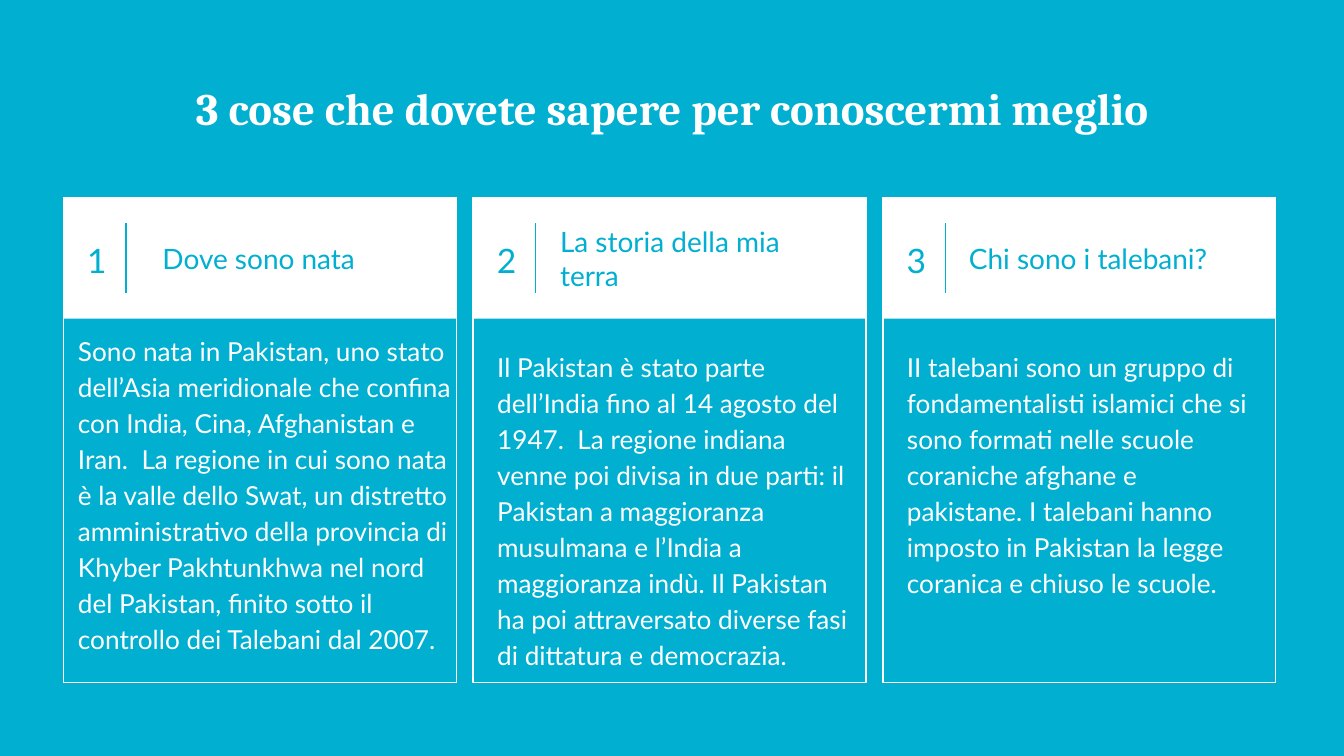
import pptx
import pptx.dml.color
import pptx.enum.shapes
import pptx.enum.text
import pptx.oxml.ns
import pptx.util
from lxml import etree

Pt = pptx.util.Pt
ALIGN = pptx.enum.text.PP_ALIGN
ANCHOR = pptx.enum.text.MSO_ANCHOR
TEAL = pptx.dml.color.RGBColor(0x01, 0xAF, 0xD1)
WHITE = pptx.dml.color.RGBColor(0xFF, 0xFF, 0xFF)

TITLE = "3 cose che dovete sapere per conoscermi meglio"
CARDS = [
    {
        "heading": "Dove sono nata",
        "heading_offset": 46,
        "body": "Sono nata in Pakistan, uno stato dell’Asia meridionale che confina con India, Cina, "
                "Afghanistan e Iran.  La regione in cui sono nata è la valle dello Swat, un distretto "
                "amministrativo della provincia di Khyber Pakhtunkhwa nel nord del Pakistan, finito "
                "sotto il controllo dei Talebani dal 2007.",
        "body_box": (0.7, 170, 216, 210),
    },
    {
        "heading": "La storia della mia terra",
        "heading_offset": 39.5,
        "body": "Il Pakistan è stato parte dell’India fino al 14 agosto del 1947.  La regione indiana "
                "venne poi divisa in due parti: il Pakistan a maggioranza musulmana e l’India a "
                "maggioranza indù. Il Pakistan  ha poi attraversato diverse fasi di dittatura e "
                "democrazia.",
        "body_box": (5.8, 178.5, 204.5, 210),
    },
    {
        "heading": "Chi sono i talebani?",
        "heading_offset": 39,
        "body": "II talebani sono un gruppo di fondamentalisti islamici che si sono formati nelle "
                "scuole coraniche afghane e pakistane. I talebani hanno imposto in Pakistan la legge "
                "coranica e chiuso le scuole.",
        "body_box": (5.8, 178.5, 199.5, 187),
    },
]

CARD_LEFT, CARD_TOP, CARD_PITCH = 34, 105.8, 219.5
CARD_WIDTH, CARD_HEIGHT, HEADER_HEIGHT = 210.5, 260, 65
DIVIDER_OFFSET, DIVIDER_TOP, DIVIDER_BOTTOM = 33.5, 119.5, 157


def add_text(slide, text, box, size, color, font="Lato", bold=False,
             align=ALIGN.LEFT, anchor=ANCHOR.TOP, spacing=None):
    shape = slide.shapes.add_textbox(*map(Pt, box))
    frame = shape.text_frame
    frame.word_wrap = True
    frame.vertical_anchor = anchor
    frame.margin_left = frame.margin_right = Pt(7.2)
    frame.margin_top = frame.margin_bottom = Pt(7.2)
    paragraph = frame.paragraphs[0]
    paragraph.alignment = align
    if spacing:
        paragraph.line_spacing = spacing
    run = paragraph.add_run()
    run.text = text
    run.font.name = font
    run.font.size = Pt(size)
    run.font.bold = bold
    run.font.color.rgb = color


def add_rectangle(slide, box, fill=None, line=None):
    shape = slide.shapes.add_shape(pptx.enum.shapes.MSO_SHAPE.RECTANGLE, *map(Pt, box))
    shape.shadow.inherit = False
    if fill is None:
        shape.fill.background()
    else:
        shape.fill.solid()
        shape.fill.fore_color.rgb = fill
    if line is None:
        shape.line.fill.background()
    else:
        shape.line.color.rgb = line
        shape.line.width = Pt(0.75)


def add_divider(slide, x):
    connector = slide.shapes.add_connector(
        pptx.enum.shapes.MSO_CONNECTOR.STRAIGHT,
        Pt(x), Pt(DIVIDER_TOP), Pt(x), Pt(DIVIDER_BOTTOM))
    connector.line.color.rgb = TEAL
    connector.line.width = Pt(0.75)
    etree.SubElement(connector._element.spPr, pptx.oxml.ns.qn("a:effectLst"))


def add_card(slide, number, card):
    left = CARD_LEFT + (number - 1) * CARD_PITCH
    add_rectangle(slide, (left, CARD_TOP, CARD_WIDTH, CARD_HEIGHT), line=WHITE)
    add_rectangle(slide, (left, CARD_TOP, CARD_WIDTH, HEADER_HEIGHT), fill=WHITE)
    add_text(slide, str(number), (left + 4.2, CARD_TOP - 0.5, 27.5, HEADER_HEIGHT), 18, TEAL,
             align=ALIGN.CENTER, anchor=ANCHOR.MIDDLE, spacing=1.15)
    add_divider(slide, left + DIVIDER_OFFSET)
    add_text(slide, card["heading"],
             (left + card["heading_offset"], CARD_TOP, 165.5, HEADER_HEIGHT), 15, TEAL,
             anchor=ANCHOR.MIDDLE)
    offset, top, width, height = card["body_box"]
    add_text(slide, card["body"], (left + offset, top, width, height), 14, WHITE, spacing=1.15)


def main():
    presentation = pptx.Presentation()
    presentation.slide_width = Pt(720)
    presentation.slide_height = Pt(405)
    slide = presentation.slides.add_slide(presentation.slide_layouts[6])
    slide.background.fill.solid()
    slide.background.fill.fore_color.rgb = TEAL
    add_text(slide, TITLE, (30.5, 36, 659, 54), 24, WHITE, font="Cambria", bold=True,
             align=ALIGN.CENTER)
    for number, card in enumerate(CARDS, 1):
        add_card(slide, number, card)
    presentation.save("out.pptx")


if __name__ == "__main__":
    main()
